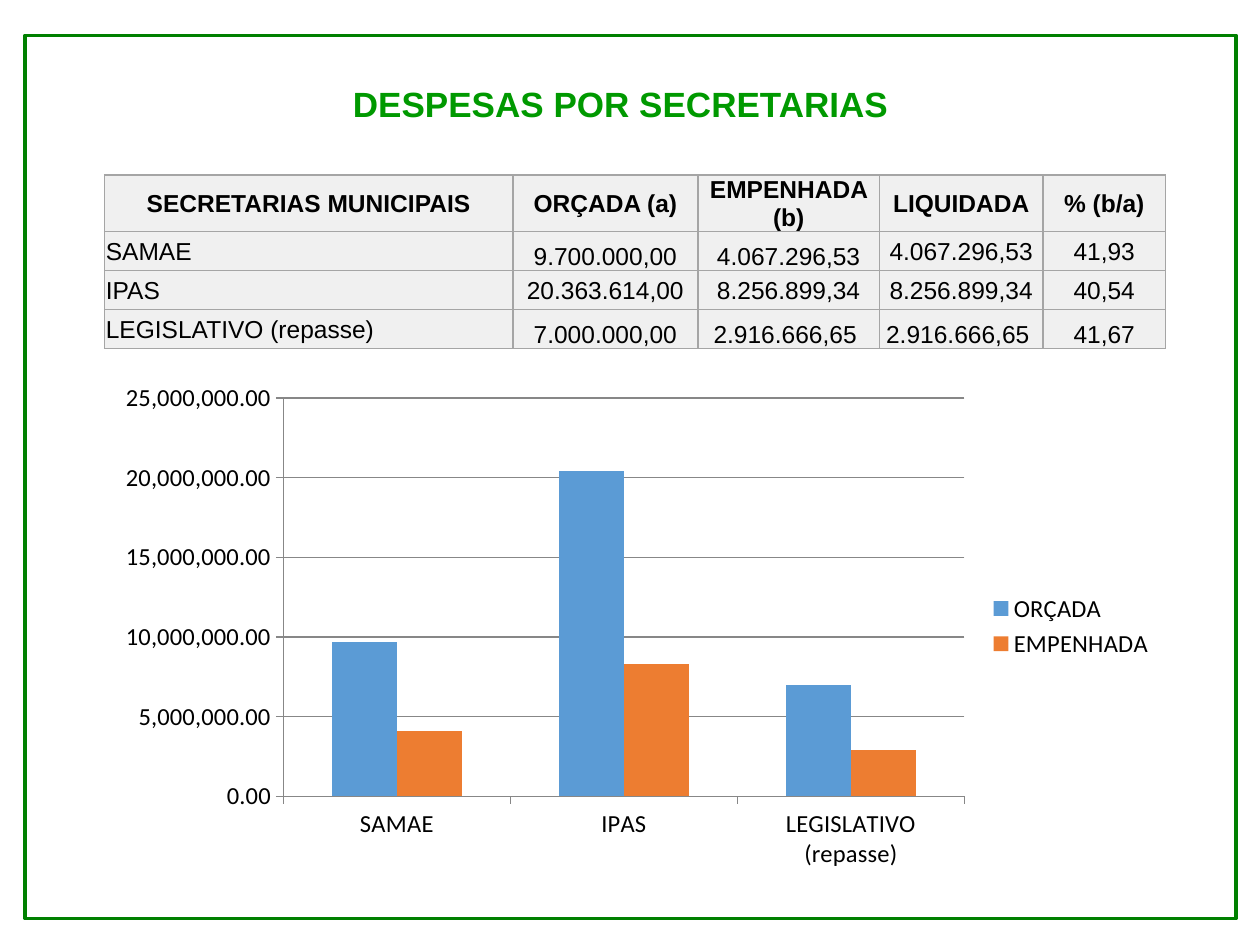
"""Build the slide on spending by municipal department: a table and a column chart."""
import dataclasses

import lxml.etree
import pptx
import pptx.chart.data
import pptx.dml.color
import pptx.enum.chart
import pptx.enum.shapes
import pptx.enum.text
import pptx.oxml.ns
import pptx.util

Inches = pptx.util.Inches
Pt = pptx.util.Pt
Anchor = pptx.enum.text.MSO_ANCHOR
Align = pptx.enum.text.PP_ALIGN

COLORS = {
    "frame": "008000",
    "title": "009900",
    "text": "000000",
    "cell": "F0F0F0",
    "border": "A5A5A5",
    "grid": "878787",
    "budgeted": "5B9BD5",
    "committed": "ED7D31",
}
LEFT, WIDTH = 0.83, 8.43
COLUMN_WIDTHS = (3.24, 1.47, 1.44, 1.3, 0.97)
HEADER_HEIGHT, ROW_HEIGHT = 0.44, 0.31


@dataclasses.dataclass(frozen=True)
class TableRow:
    """Texts of one table row and the anchor of each cell, m or b."""

    texts: tuple[str, ...]
    anchors: str = "mmmmm"
    header: bool = False


@dataclasses.dataclass(frozen=True)
class ChartSeries:
    """Name, colour key and values of one chart series."""

    name: str
    color: str
    values: tuple[int, ...]


ROWS = (
    TableRow(("SECRETARIAS MUNICIPAIS", "ORÇADA (a)", "EMPENHADA (b)", "LIQUIDADA", "% (b/a)"), header=True),
    TableRow(("SAMAE", "9.700.000,00", "4.067.296,53", "4.067.296,53", "41,93"), "mbbmm"),
    TableRow(("IPAS", "20.363.614,00", "8.256.899,34", "8.256.899,34", "40,54")),
    TableRow(("LEGISLATIVO (repasse)", "7.000.000,00", "2.916.666,65 ", "2.916.666,65 ", "41,67"), "mbbbb"),
)
SERIES = (
    ChartSeries("ORÇADA", "budgeted", (9700000, 20400000, 7000000)),
    ChartSeries("EMPENHADA", "committed", (4100000, 8300000, 2900000)),
)


def color(key: str) -> pptx.dml.color.RGBColor:
    """Return the named colour."""
    return pptx.dml.color.RGBColor.from_string(COLORS[key])


def style_font(font, name: str, size: float, key: str, bold: bool = False) -> None:
    """Set face, size, colour and weight of a font."""
    font.name, font.size, font.bold = name, Pt(size), bold
    font.color.rgb = color(key)


def add_span(para, text: str, size: float, key: str, bold: bool) -> None:
    """Append one Arial run to a paragraph."""
    span = para.add_run()
    span.text = text
    style_font(span.font, "Arial", size, key, bold)


def add_borders(cell) -> None:
    """Draw a thin line on all four sides of a cell."""
    qn = pptx.oxml.ns.qn
    properties = cell._tc.get_or_add_tcPr()
    for index, side in enumerate(("a:lnL", "a:lnR", "a:lnT", "a:lnB")):
        line = lxml.etree.Element(qn(side), w=str(Pt(1)))
        fill = lxml.etree.SubElement(line, qn("a:solidFill"))
        lxml.etree.SubElement(fill, qn("a:srgbClr"), val=COLORS["border"])
        properties.insert(index, line)


def fill_cell(cell, text: str, anchor: str, centered: bool, bold: bool) -> None:
    """Write and format one table cell."""
    cell.fill.solid()
    cell.fill.fore_color.rgb = color("cell")
    cell.margin_left = cell.margin_right = cell.margin_top = Inches(0.01)
    cell.margin_bottom = 0
    cell.vertical_anchor = Anchor.BOTTOM if anchor == "b" else Anchor.MIDDLE
    para = cell.text_frame.paragraphs[0]
    para.alignment = Align.CENTER if centered else Align.LEFT
    add_span(para, text, 14, "text", bold)
    add_borders(cell)


def add_spending_table(page) -> None:
    """Add the table of amounts per department."""
    height = HEADER_HEIGHT + ROW_HEIGHT * (len(ROWS) - 1)
    table = page.shapes.add_table(
        len(ROWS), len(COLUMN_WIDTHS), Inches(LEFT), Inches(1.39), Inches(WIDTH), Inches(height)
    ).table
    for column, width in zip(table.columns, COLUMN_WIDTHS):
        column.width = Inches(width)
    for row_index, row in enumerate(ROWS):
        table.rows[row_index].height = Inches(HEADER_HEIGHT if row.header else ROW_HEIGHT)
        for column_index, (text, anchor) in enumerate(zip(row.texts, row.anchors)):
            centered = row.header or column_index > 0
            fill_cell(table.cell(row_index, column_index), text, anchor, centered, row.header)


def add_frame(page) -> None:
    """Add the green outline around the page."""
    frame = page.shapes.add_shape(
        pptx.enum.shapes.MSO_SHAPE.RECTANGLE, Inches(0.2), Inches(0.28), Inches(9.61), Inches(7.01)
    )
    frame.shadow.inherit = False
    frame.fill.background()
    frame.line.color.rgb = color("frame")
    frame.line.width = Pt(2)


def set_title(page, text: str) -> None:
    """Place and write the page title."""
    box = page.shapes.title
    box.left, box.top, box.width, box.height = Inches(2.09), Inches(0.6), Inches(5.67), Inches(0.44)
    box.text_frame.vertical_anchor = Anchor.MIDDLE
    para = box.text_frame.paragraphs[0]
    para.alignment = Align.CENTER
    add_span(para, text, 20, "title", True)


def add_spending_chart(page) -> None:
    """Add the clustered columns of budgeted and committed amounts."""
    data = pptx.chart.data.CategoryChartData(number_format="#,##0.00")
    data.categories = [row.texts[0] for row in ROWS if not row.header]
    for series in SERIES:
        data.add_series(series.name, series.values)
    chart = page.shapes.add_chart(
        pptx.enum.chart.XL_CHART_TYPE.COLUMN_CLUSTERED,
        Inches(LEFT), Inches(2.96), Inches(WIDTH), Inches(4.02), data,
    ).chart
    chart.has_title = False
    style_font(chart.font, "Calibri", 14, "text")
    chart.has_legend = True
    chart.legend.position = pptx.enum.chart.XL_LEGEND_POSITION.RIGHT
    chart.legend.include_in_layout = False
    style_font(chart.legend.font, "Calibri", 14, "text")
    plot = chart.plots[0]
    plot.gap_width, plot.overlap, plot.vary_by_categories = 150, 0, False
    for drawn, series in zip(plot.series, SERIES):
        drawn.format.fill.solid()
        drawn.format.fill.fore_color.rgb = color(series.color)
    for axis in (chart.category_axis, chart.value_axis):
        axis.major_tick_mark = pptx.enum.chart.XL_TICK_MARK.OUTSIDE
        axis.format.line.color.rgb = color("grid")
        style_font(axis.tick_labels.font, "Calibri", 14, "text")
    amounts = chart.value_axis
    amounts.minimum_scale, amounts.maximum_scale, amounts.major_unit = 0, 25000000, 5000000
    amounts.has_major_gridlines = True
    amounts.major_gridlines.format.line.color.rgb = color("grid")
    amounts.tick_labels.number_format = "#,##0.00"
    amounts.tick_labels.number_format_is_linked = False


def main() -> None:
    """Build and save the deck."""
    deck = pptx.Presentation()
    deck.slide_width, deck.slide_height = Inches(10), Inches(7.5)
    page = deck.slides.add_slide(deck.slide_layouts.get_by_name("Title Only"))
    add_spending_table(page)
    add_frame(page)
    set_title(page, "DESPESAS POR SECRETARIAS")
    add_spending_chart(page)
    deck.save("out.pptx")


if __name__ == "__main__":
    main()
